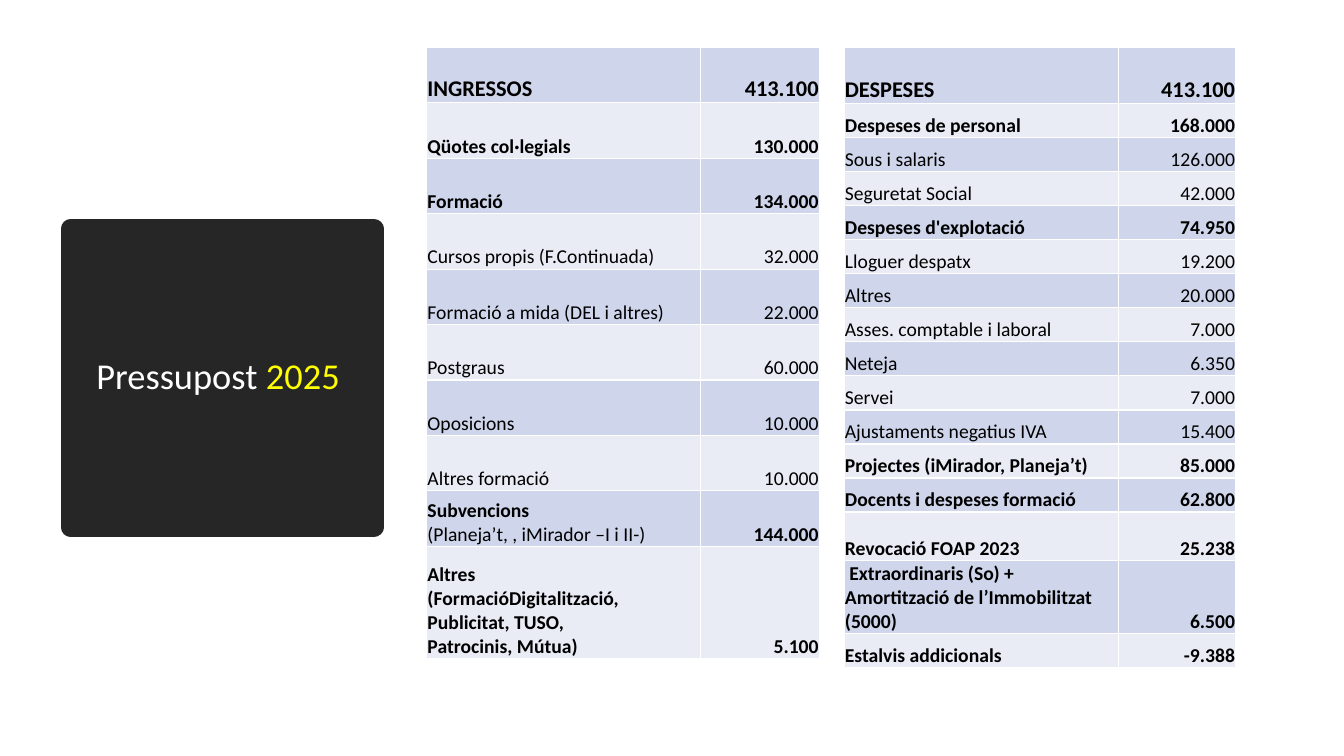
import pptx
import pptx.util
import pptx.dml.color
import pptx.enum.text
import pptx.oxml
import pptx.oxml.ns
import lxml.etree

Inches, Pt = pptx.util.Inches, pptx.util.Pt
ALIGN = pptx.enum.text.PP_ALIGN
MIDDLE = pptx.enum.text.MSO_ANCHOR.MIDDLE
BOTTOM = pptx.enum.text.MSO_ANCHOR.BOTTOM

FONT = "Calibri"
COLORS = {"dark": "262626", "white": "FFFFFF", "year": "FFFF00",
          "text": "000000", "odd": "CFD5EA", "even": "E9EBF5"}

TITLE = [("Pressupost ", "white"), ("2025 ", "year")]

# Each row: label lines as (text, bold), amount, amount bold
def bold(label, amount):
    return [(line, True) for line in label.split("\n")], amount, True


def plain(label, amount):
    return [(label, False)], amount, False


INCOME = [
    bold("INGRESSOS", "413.100"),
    bold("Qüotes col·legials", "130.000"),
    bold("Formació", "134.000"),
    plain("Cursos propis (F.Continuada)", "32.000"),
    plain("Formació a mida (DEL i altres)", "22.000"),
    plain("Postgraus", "60.000"),
    plain("Oposicions", "10.000"),
    plain("Altres formació", "10.000"),
    ([("Subvencions", True), ("(Planeja’t, , iMirador –I i II-)", False)],
     "144.000", True),
    bold("Altres\n(FormacióDigitalització, Publicitat, TUSO,\n"
         "Patrocinis, Mútua)", "5.100"),
]
COSTS = [
    bold("DESPESES", "413.100"),
    bold("Despeses de personal", "168.000"),
    plain("Sous i salaris", "126.000"),
    plain("Seguretat Social", "42.000"),
    bold("Despeses d'explotació", "74.950"),
    plain("Lloguer despatx", "19.200"),
    plain("Altres", "20.000"),
    plain("Asses. comptable i laboral", "7.000"),
    plain("Neteja", "6.350"),
    plain("Servei", "7.000"),
    plain("Ajustaments negatius IVA", "15.400"),
    bold("Projectes (iMirador, Planeja’t)", "85.000"),
    bold("Docents i despeses formació", "62.800"),
    bold("Revocació FOAP 2023", "25.238"),
    bold(" Extraordinaris (So) + Amortització de l’Immobilitzat (5000)",
         "6.500"),
    bold("Estalvis addicionals", "-9.388"),
]

TOP = 0.47
THIN = 4.05 / 12  # twelve equal rows under the costs header
TABLES = [
    (4.23, (2.72, 1.18), [0.55] * 9 + [1.11], INCOME),
    (8.37, (2.72, 1.17), [0.56] + [THIN] * 12 + [0.48, 0.73, THIN], COSTS),
]


def rgb(name):
    return pptx.dml.color.RGBColor.from_string(COLORS[name])


def add_run(para, text, size, color, strong=False):
    run = para.add_run()
    run.text = text
    run.font.name, run.font.size, run.font.bold = FONT, Pt(size), strong
    run.font.color.rgb = rgb(color)


def add_edges(cell):
    """Draw a white 1 pt line on all four sides of the cell."""
    props = cell._tc.get_or_add_tcPr()
    for place, side in enumerate("LRTB"):
        props.insert(place, pptx.oxml.parse_xml(
            f'<a:ln{side} {pptx.oxml.ns.nsdecls("a")} w="{Pt(1)}">'
            f'<a:solidFill><a:srgbClr val="{COLORS["white"]}"/></a:solidFill>'
            f'</a:ln{side}>'))


def fill_cell(cell, lines, size, shade, align):
    cell.fill.solid()
    cell.fill.fore_color.rgb = rgb(shade)
    cell.margin_left = cell.margin_right = cell.margin_top = Inches(0.01)
    cell.margin_bottom = 0
    cell.vertical_anchor = BOTTOM
    add_edges(cell)
    for num, (text, strong) in enumerate(lines):
        frame = cell.text_frame
        para = frame.add_paragraph() if num else frame.paragraphs[0]
        para.alignment = align
        add_run(para, text, size, "text", strong)


def add_budget(slide, left, widths, heights, rows):
    table = slide.shapes.add_table(
        len(rows), 2, Inches(left), Inches(TOP),
        Inches(sum(widths)), Inches(sum(heights))).table
    table.first_row = table.horz_banding = False
    for col, width in zip(table.columns, widths):
        col.width = Inches(width)
    for num, (label, amount, strong) in enumerate(rows):
        table.rows[num].height = Inches(heights[num])
        size = 14 if num else 16
        shade = "even" if num % 2 else "odd"
        fill_cell(table.cell(num, 0), label, size, shade, ALIGN.LEFT)
        fill_cell(table.cell(num, 1), [(amount, strong)], size, shade,
                  ALIGN.RIGHT)


def set_title(title):
    title.left, title.top = Inches(0.7), Inches(2.27)
    title.width, title.height = Inches(3.01), Inches(2.96)
    title.fill.solid()
    title.fill.fore_color.rgb = rgb("dark")
    title.line.color.rgb = rgb("dark")
    title.line.width = Pt(13.75)
    # Round joins give the box its soft corners
    lxml.etree.SubElement(title.line._get_or_add_ln(),
                          pptx.oxml.ns.qn("a:round"))
    frame = title.text_frame
    frame.word_wrap = True
    frame.auto_size = pptx.enum.text.MSO_AUTO_SIZE.NONE
    frame.vertical_anchor = MIDDLE
    para = frame.paragraphs[0]
    para.alignment, para.line_spacing = ALIGN.CENTER, 0.9
    for text, color in TITLE:
        add_run(para, text, 26, color)


def main():
    deck = pptx.Presentation()
    deck.slide_width, deck.slide_height = Inches(13.33), Inches(7.5)
    slide = deck.slides.add_slide(deck.slide_layouts[5])
    set_title(slide.shapes.title)
    for budget in TABLES:
        add_budget(slide, *budget)
    deck.save("out.pptx")


if __name__ == "__main__":
    main()
